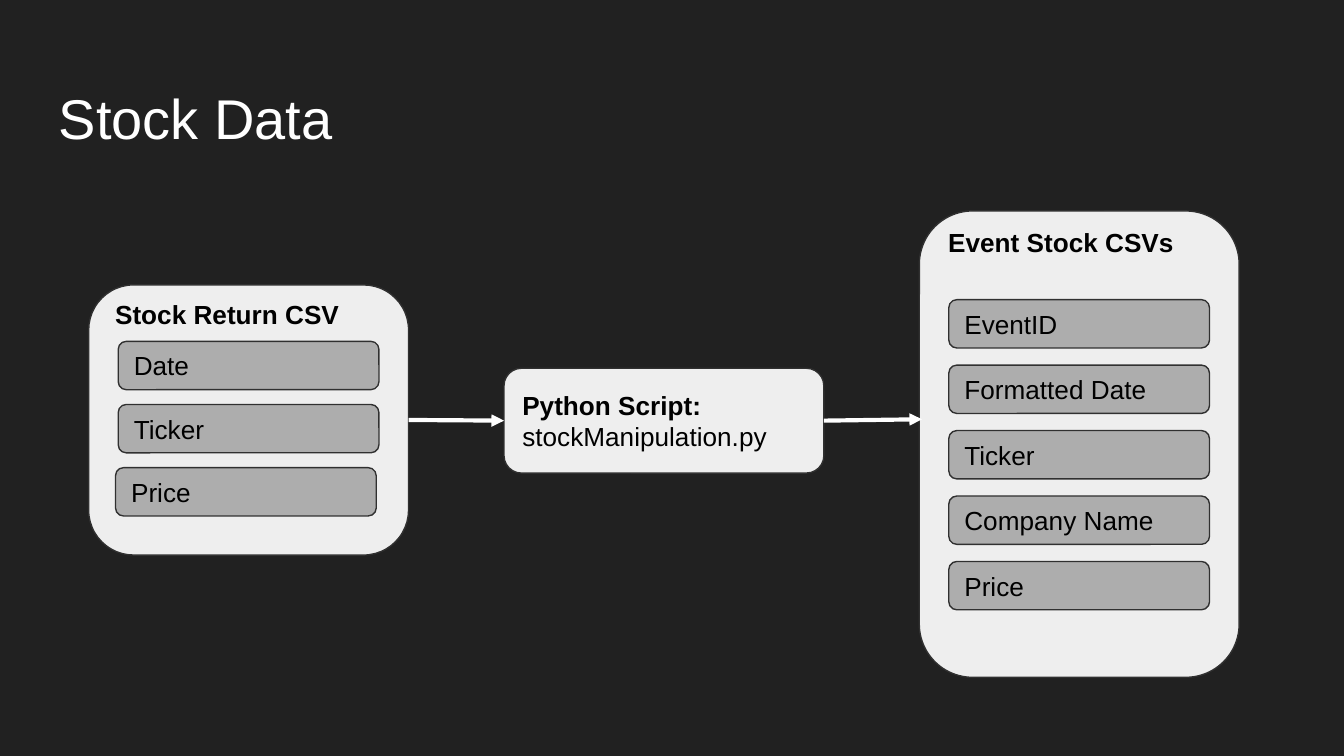
from dataclasses import dataclass

from lxml.etree import SubElement
from pptx import Presentation
from pptx.dml.color import RGBColor
from pptx.enum.shapes import MSO_CONNECTOR, MSO_SHAPE
from pptx.enum.text import MSO_ANCHOR, PP_ALIGN
from pptx.oxml.ns import qn
from pptx.shapes.autoshape import Shape
from pptx.shapes.connector import Connector
from pptx.slide import Slide
from pptx.util import Inches, Pt

BACKGROUND = RGBColor(0x21, 0x21, 0x21)
PANEL = RGBColor(0xEE, 0xEE, 0xEE)
FIELD = RGBColor(0xAD, 0xAD, 0xAD)
OUTLINE = RGBColor(0x30, 0x30, 0x30)
WHITE = RGBColor(0xFF, 0xFF, 0xFF)
BLACK = RGBColor(0x00, 0x00, 0x00)

# The grid has 100 columns and 56.25 rows of square cells
COLUMNS, ROWS = 100, 56.25
CELL = Inches(0.1)
PANEL_WIDTH = 23.8
FIELD_WIDTH, FIELD_HEIGHT = 19.4, 3.6
TOP, LEFT, BOTTOM, RIGHT = range(4)


def grid(cells: float) -> int:
    return round(cells * CELL)


@dataclass(frozen=True)
class Line:
    text: str
    bold: bool = False


@dataclass(frozen=True)
class Box:
    column: float
    row: float
    width: float
    height: float


@dataclass(frozen=True)
class FieldList:
    names: tuple[str, ...]
    columns: tuple[float, ...]
    first_row: float
    pitch: float


def write(shape: Shape, lines: list[Line], size: float, color: RGBColor,
          anchor: MSO_ANCHOR, top_inset: float = 1) -> None:
    frame = shape.text_frame
    frame.word_wrap = True
    frame.vertical_anchor = anchor
    frame.margin_left = frame.margin_right = frame.margin_bottom = grid(1)
    frame.margin_top = grid(top_inset)
    for index, line in enumerate(lines):
        paragraph = frame.add_paragraph() if index else frame.paragraphs[0]
        paragraph.alignment = PP_ALIGN.LEFT
        run = paragraph.add_run()
        run.text = line.text
        run.font.name = "Arial"
        run.font.size = Pt(size)
        run.font.bold = line.bold
        run.font.color.rgb = color


def add_box(slide: Slide, box: Box, fill: RGBColor, lines: list[Line],
            anchor: MSO_ANCHOR = MSO_ANCHOR.MIDDLE, top_inset: float = 1) -> Shape:
    shape = slide.shapes.add_shape(
        MSO_SHAPE.ROUNDED_RECTANGLE,
        grid(box.column), grid(box.row), grid(box.width), grid(box.height))
    shape.shadow.inherit = False
    shape.fill.solid()
    shape.fill.fore_color.rgb = fill
    shape.line.color.rgb = OUTLINE
    shape.line.width = Pt(0.75)
    write(shape, lines, 14, BLACK, anchor, top_inset)
    return shape


def add_file(slide: Slide, box: Box, heading: str, fields: FieldList) -> Shape:
    panel = add_box(slide, box, PANEL, [Line(heading, bold=True)], MSO_ANCHOR.TOP, 0)
    for index, (name, column) in enumerate(zip(fields.names, fields.columns)):
        row = fields.first_row + index * fields.pitch
        add_box(slide, Box(column, row, FIELD_WIDTH, FIELD_HEIGHT), FIELD, [Line(name)])
    return panel


def add_arrow(slide: Slide, start: Shape, end_column: float, end_row: float) -> Connector:
    arrow = slide.shapes.add_connector(
        MSO_CONNECTOR.STRAIGHT, start.left + start.width,
        start.top + start.height // 2, grid(end_column), grid(end_row))
    arrow.begin_connect(start, RIGHT)
    arrow.line.color.rgb = WHITE
    arrow.line.width = Pt(2.25)
    SubElement(arrow.line._get_or_add_ln(), qn("a:tailEnd"), type="triangle")
    SubElement(arrow._element.spPr, qn("a:effectLst"))
    return arrow


def main() -> None:
    deck = Presentation()
    deck.slide_width, deck.slide_height = grid(COLUMNS), grid(ROWS)
    slide = deck.slides.add_slide(deck.slide_layouts[6])
    slide.background.fill.solid()
    slide.background.fill.fore_color.rgb = BACKGROUND

    # Title
    title = slide.shapes.add_textbox(grid(3.4), grid(4.9), grid(93.2), grid(6.3))
    write(title, [Line("Stock Data")], 30, WHITE, MSO_ANCHOR.TOP, 1.3)

    # Input file, script and output files
    stock_return = add_file(
        slide, Box(6.6, 21.2, PANEL_WIDTH, 20.1), "Stock Return CSV",
        FieldList(("Date", "Ticker", "Price"), (8.8, 8.8, 8.6), 25.4, 4.7))
    script = add_box(
        slide, Box(37.5, 27.4, PANEL_WIDTH, 7.8), PANEL,
        [Line("Python Script:", bold=True), Line("stockManipulation.py")])
    event_names = ("EventID", "Formatted Date", "Ticker", "Company Name", "Price")
    add_file(
        slide, Box(68.4, 15.7, PANEL_WIDTH, 34.7), "Event Stock CSVs",
        FieldList(event_names, (70.6,) * len(event_names), 22.3, 4.87))

    # Flow from input to output
    add_arrow(slide, script, 68.6, 31.2)
    add_arrow(slide, stock_return, 37.5, 31.3).end_connect(script, LEFT)

    deck.save("out.pptx")


if __name__ == "__main__":
    main()
